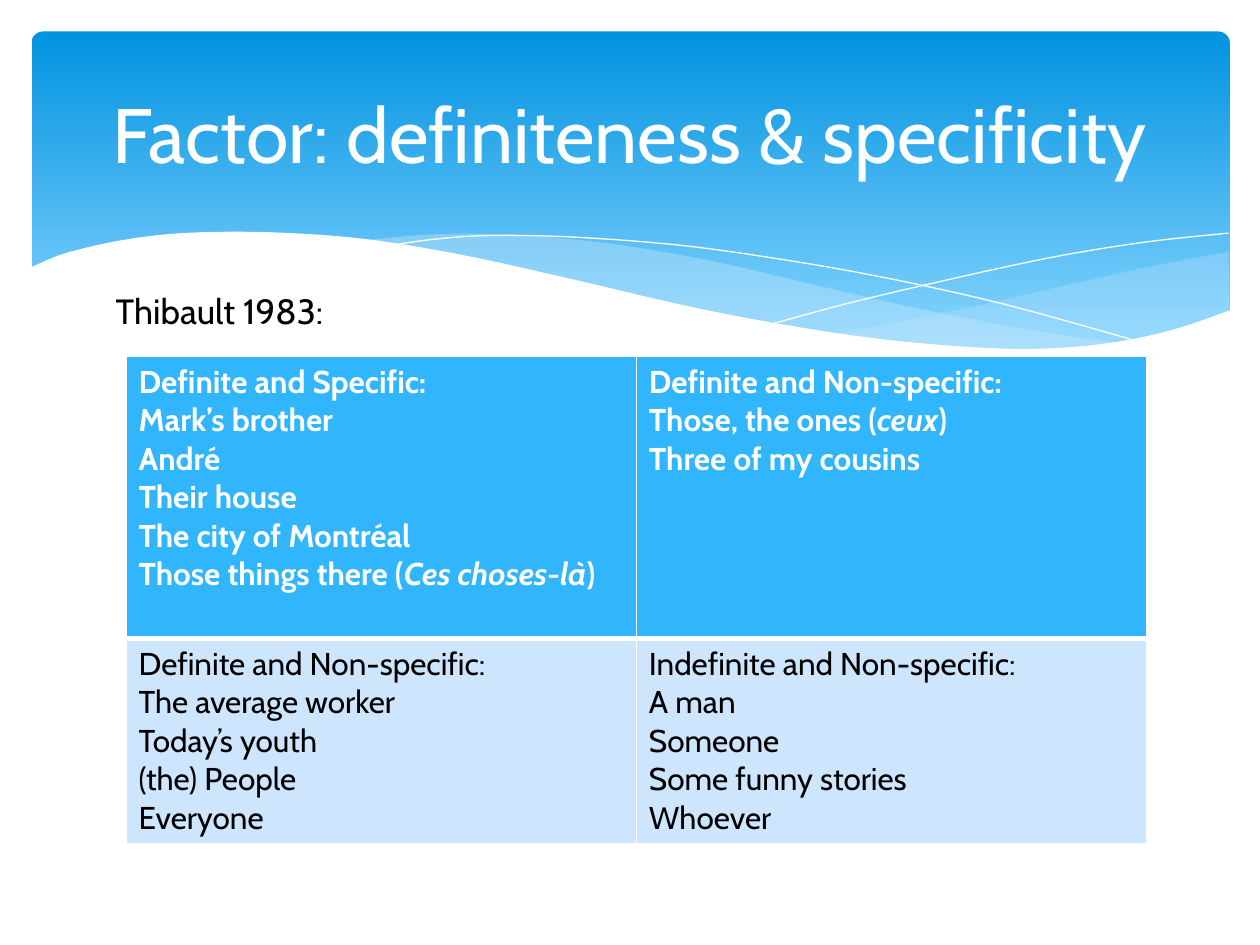
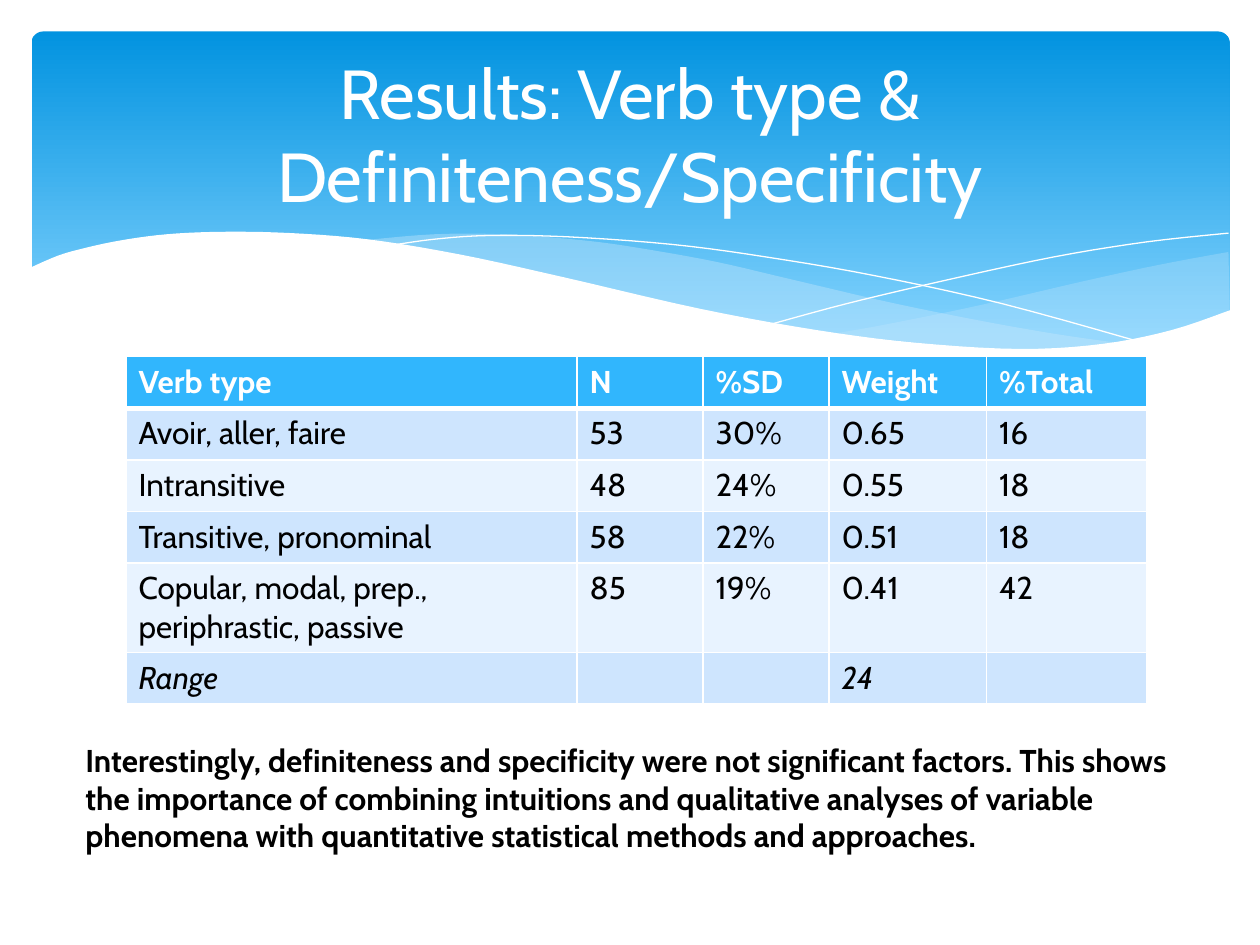
from lxml import etree
from pptx import Presentation
from pptx import util as u
from pptx.dml.color import RGBColor
from pptx.enum import shapes, text
from pptx.oxml import ns

PX = 9144
FONT = "Cabin"
COLORS = {
    "white": "FFFFFF", "black": "000000", "band_top": "0293E0", "band_bottom": "83D3FE",
    "ripple": "C6E7FC", "header": "31B6FD", "row_dark": "CEE5FE", "row_light": "E8F3FF",
}
RGB = {name: RGBColor.from_string(value) for name, value in COLORS.items()}

RIPPLE_BACK = [
    [(975, 200), (921, 210), (861, 223), (779, 242), (706, 257), (661, 265)],
    [(661, 265), (719, 271), (781, 277), (844, 277), (897, 270), (942, 259), (976, 247)],
]
RIPPLE_FRONT = [
    [(893, 273), (837, 265), (775, 254), (706, 240), (629, 222), (569, 208),
     (514, 198), (465, 191), (399, 186), (344, 186), (286, 191)],
    [(286, 191), (342, 199), (404, 211), (449, 222), (530, 240), (601, 255),
     (665, 266), (722, 274), (785, 278), (848, 277), (893, 273)],
]
THREAD_FALLING = [
    [(309, 195), (344, 190), (387, 187), (450, 188), (533, 194), (608, 204),
     (695, 219), (795, 241), (907, 272)],
]
THREAD_RISING = [
    [(613, 257), (672, 241), (748, 223), (836, 204), (910, 192), (975, 185)],
]
WAVE = [
    [(977, 246), (930, 262), (875, 273), (809, 277), (726, 272), (648, 262),
     (555, 245), (447, 220), (365, 202), (292, 190), (230, 185), (177, 184),
     (132, 186), (95, 191), (67, 197), (46, 203), (23, 213)],
    [(23, 213), (23, 329)],
    [(23, 329), (977, 329)],
]
CURVES = [
    {"edges": RIPPLE_BACK, "fill": "ripple", "alpha": 29},
    {"edges": RIPPLE_FRONT, "fill": "ripple", "alpha": 40},
    {"edges": THREAD_FALLING, "line": "white"},
    {"edges": THREAD_RISING, "line": "white"},
    {"edges": WAVE, "fill": "white", "alpha": 100},
]

PAGES = [
    {
        "title": "Factor: definiteness & specificity",
        "title_size": 44,
        "note": "Thibault 1983:",
        "note_at": (82, 225, 875, 44),
        "note_font": {"size": u.Pt(20), "bold": False},
        "columns": [405, 405],
        "rows": [224, 160],
        "cells": [
            [["Definite and Specific:", "Mark’s brother", "André", "Their house",
              "The city of Montréal", "Those things there (*Ces choses-là*)"],
             ["Definite and Non-specific:", "Those, the ones (*ceux*)",
              "Three of my cousins"]],
            [["Definite and Non-specific:", "The average worker", "Today’s youth",
              "(the) People", "Everyone"],
             ["Indefinite and Non-specific:", "A man", "Someone",
              "Some funny stories", "Whoever"]],
        ],
    },
    {
        "title": "Results: Verb type & Definiteness/Specificity",
        "title_size": 39.6,
        "note": "Interestingly, definiteness and specificity were not significant factors. "
                "This shows the importance of combining intuitions and qualitative analyses "
                "of variable phenomena with quantitative statistical methods and approaches.",
        "note_at": (58, 583, 900, 101),
        "note_font": {"size": u.Pt(18), "bold": True},
        "columns": [358, 100, 100, 125, 127],
        "rows": [41, 41, 41, 41, 71, 41],
        "cells": [
            [["Verb type"], ["N"], ["%SD"], ["Weight"], ["%Total"]],
            [["Avoir, aller, faire"], ["53"], ["30%"], ["0.65"], ["16"]],
            [["Intransitive"], ["48"], ["24%"], ["0.55"], ["18"]],
            [["Transitive, pronominal"], ["58"], ["22%"], ["0.51"], ["18"]],
            [["Copular, modal, prep., periphrastic, passive"],
             ["85"], ["19%"], ["0.41"], ["42"]],
            [["*Range*"], [], [], ["*24*"], []],
        ],
    },
]


def smooth(knots, steps=5):
    points = [knots[0], *knots, knots[-1]]
    curve = [knots[0]]
    for a, b, c, d in zip(points, points[1:], points[2:], points[3:]):
        for step in range(1, steps + 1):
            t = step / steps
            curve.append(tuple(
                (2 * q + (r - p) * t + (2 * p - 5 * q + 4 * r - s) * t ** 2
                 + (3 * q - p - 3 * r + s) * t ** 3) / 2
                for p, q, r, s in zip(a, b, c, d)))
    return curve


def write(frame, lines, color, font, align=text.PP_ALIGN.LEFT):
    frame.word_wrap = True
    for index, line in enumerate(lines):
        para = frame.paragraphs[0] if index == 0 else frame.add_paragraph()
        para.alignment = align
        for part, words in enumerate(line.split("*")):
            if words:
                span = para.add_run()
                span.text = words
                span.font.color.rgb = RGB[color]
                for name, value in {"name": FONT, "italic": part % 2 == 1, **font}.items():
                    setattr(span.font, name, value)


deck = Presentation()
deck.slide_width, deck.slide_height = 1000 * PX, 750 * PX

for content in PAGES:
    page = deck.slides.add_slide(deck.slide_layouts[6])

    band = page.shapes.add_shape(
        shapes.MSO_SHAPE.ROUNDED_RECTANGLE, *(v * PX for v in (25, 25, 951, 270)))
    band.adjustments[0] = 0.034
    band.shadow.inherit = False
    band.line.fill.background()
    band.fill.gradient()
    band.fill.gradient_angle = 270
    for stop, position, color in zip(
            band.fill.gradient_stops, (0, 0.9), ("band_top", "band_bottom")):
        stop.position = position
        stop.color.rgb = RGB[color]

    for curve in CURVES:
        points = [(x * PX, y * PX) for edge in curve["edges"] for x, y in smooth(edge)]
        builder = page.shapes.build_freeform(*points[0], scale=1.0)
        builder.add_line_segments(points[1:], close="fill" in curve)
        outline = builder.convert_to_shape()
        outline.shadow.inherit = False
        if "fill" in curve:
            outline.line.fill.background()
            outline.fill.solid()
            outline.fill.fore_color.rgb = RGB[curve["fill"]]
            tint = outline.element.spPr.find(ns.qn("a:solidFill"))[0]
            etree.SubElement(tint, ns.qn("a:alpha"), val=str(curve["alpha"] * 1000))
        else:
            outline.fill.background()
            outline.line.color.rgb = RGB[curve["line"]]
            outline.line.width = 0

    columns, rows = content["columns"], content["rows"]
    table = page.shapes.add_table(
        len(rows), len(columns),
        *(v * PX for v in (100, 283, sum(columns), sum(rows)))).table
    for column, width in zip(table.columns, columns):
        column.width = width * PX
    for r, (row, height) in enumerate(zip(table.rows, rows)):
        row.height = height * PX
        shade = "header" if r == 0 else ("row_light", "row_dark")[r % 2]
        borders = {"lnL": 1, "lnR": 1, "lnT": 3 if r == 1 else 1, "lnB": 3 if r == 0 else 1}
        for cell, lines in zip(row.cells, content["cells"][r]):
            properties = cell._tc.get_or_add_tcPr()
            for side, width in borders.items():
                border = etree.SubElement(properties, ns.qn(f"a:{side}"), w=str(u.Pt(width)))
                paint = etree.SubElement(border, ns.qn("a:solidFill"))
                etree.SubElement(paint, ns.qn("a:srgbClr"), val=COLORS["white"])
            cell.fill.solid()
            cell.fill.fore_color.rgb = RGB[shade]
            write(cell.text_frame, lines, "white" if r == 0 else "black",
                  {"size": u.Pt(18), "bold": r == 0})

    title_box = page.shapes.add_textbox(*(v * PX for v in (50, 37, 900, 137)))
    title_box.text_frame.vertical_anchor = text.MSO_ANCHOR.MIDDLE
    write(title_box.text_frame, [content["title"]], "white",
          {"size": u.Pt(content["title_size"])}, text.PP_ALIGN.CENTER)

    note_box = page.shapes.add_textbox(*(v * PX for v in content["note_at"]))
    write(note_box.text_frame, [content["note"]], "black", content["note_font"])

deck.save("out.pptx")
